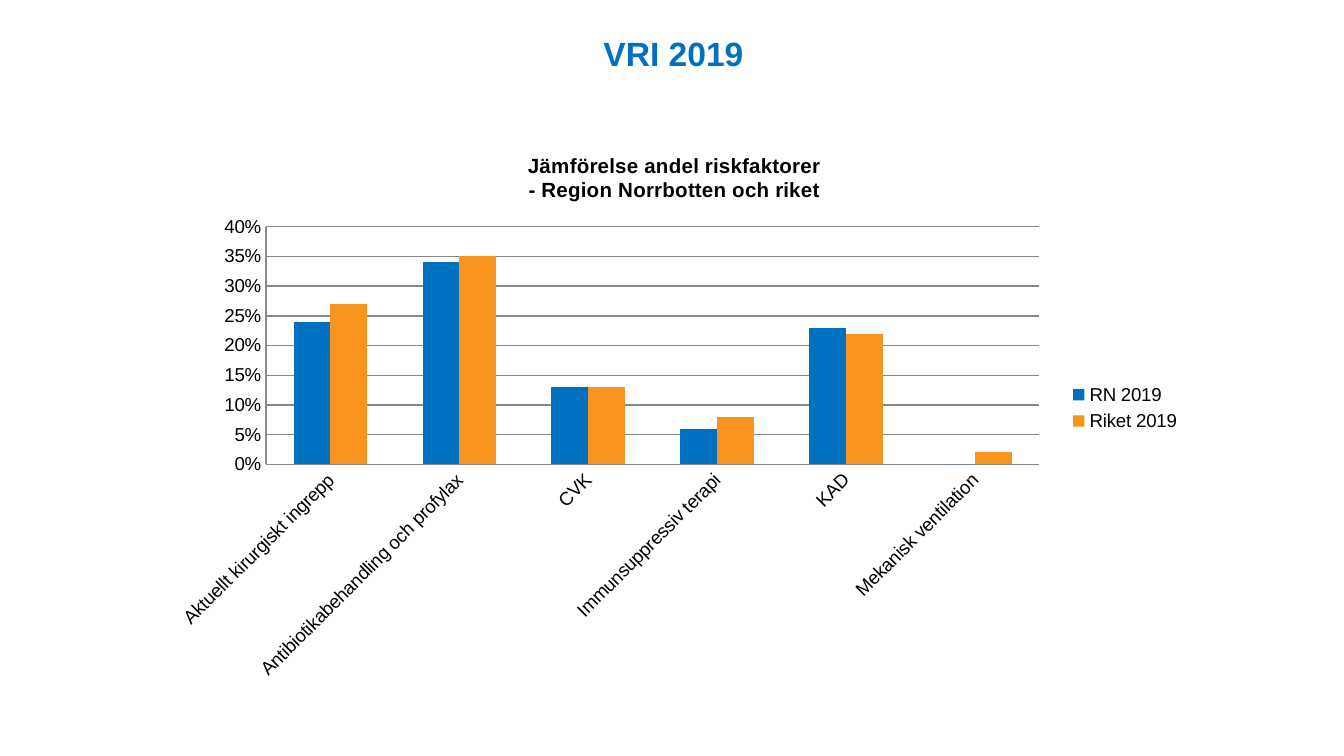
import pptx
import pptx.chart.data
import pptx.dml.color
import pptx.enum.chart
import pptx.enum.text
import pptx.oxml
import pptx.oxml.ns
import pptx.util

SCALE = 914400 / 134.4
BLUE, ORANGE, BLACK, GREY = "0070C0", "F8951F", "000000", "878787"
CATS = ["Aktuellt kirurgiskt ingrepp", "Antibiotikabehandling och profylax",
        "CVK", "Immunsuppressiv terapi", "KAD", "Mekanisk ventilation"]
ROWS = [("RN 2019", BLUE, [0.24, 0.34, 0.13, 0.06, 0.23, 0]),
        ("Riket 2019", ORANGE, [0.27, 0.35, 0.13, 0.08, 0.22, 0.02])]


def px(num):
    return pptx.util.Emu(round(num * SCALE))


def color(code):
    return pptx.dml.color.RGBColor.from_string(code)


def style(font, size, code=BLACK, bold=False):
    font.name = "Arial"
    font.size = pptx.util.Pt(size)
    font.bold = bold
    font.color.rgb = color(code)


def write(frame, text, size=10, code=BLACK, bold=False):
    for i, line in enumerate(text.split("\n")):
        para = frame.add_paragraph() if i else frame.paragraphs[0]
        para.alignment = pptx.enum.text.PP_ALIGN.CENTER
        run = para.add_run()
        run.text = line
        style(run.font, size, code, bold)


def place(node, left, top, wide=None, high=None):
    space = pptx.oxml.ns.nsdecls("c")
    parts = [("xMode", "edge"), ("yMode", "edge"), ("x", left), ("y", top)]
    if wide:
        parts = [("layoutTarget", "inner")] + parts + [("w", wide), ("h", high)]
    body = "".join(f'<c:{tag} val="{val}"/>' for tag, val in parts)
    for old in node.findall(pptx.oxml.ns.qn("c:layout")):
        node.remove(old)
    layout = pptx.oxml.parse_xml(
        f"<c:layout {space}><c:manualLayout>{body}</c:manualLayout></c:layout>")
    text = node.find(pptx.oxml.ns.qn("c:tx"))
    if text is None:
        node.insert(0, layout)
    else:
        text.addnext(layout)


def add_title(slide, left, top, wide, high):
    title = slide.shapes.title
    title.left, title.top = px(left), px(top)
    title.width, title.height = px(wide), px(high)
    frame = title.text_frame
    frame.word_wrap = True
    frame.auto_size = pptx.enum.text.MSO_AUTO_SIZE.NONE
    frame.vertical_anchor = pptx.enum.text.MSO_ANCHOR.BOTTOM
    frame.margin_left = frame.margin_right = px(10)
    frame.margin_top = frame.margin_bottom = px(5)
    write(frame, "VRI 2019", size=18, code=BLUE, bold=True)


def set_axes(chart):
    enum = pptx.enum.chart
    cat, val = chart.category_axis, chart.value_axis
    for axis in (cat, val):
        axis.major_tick_mark = axis.minor_tick_mark = enum.XL_TICK_MARK.NONE
        axis.format.line.color.rgb = color(GREY)
        axis.format.line.width = pptx.util.Pt(0.75)
        style(axis.tick_labels.font, 10)
    cat.has_major_gridlines = False
    turn = cat.tick_labels.font._element.getparent().getparent().getparent()
    turn.find(pptx.oxml.ns.qn("a:bodyPr")).set("rot", "-2700000")
    val.minimum_scale, val.maximum_scale, val.major_unit = 0, 0.4, 0.05
    val.tick_labels.number_format = "0%"
    val.tick_labels.number_format_is_linked = False
    grid = val.major_gridlines.format.line
    grid.color.rgb = color(GREY)
    grid.width = pptx.util.Pt(0.75)


def add_bars(slide, left, top, wide, high):
    enum = pptx.enum.chart
    data = pptx.chart.data.CategoryChartData(number_format="0%")
    data.categories = CATS
    for name, code, vals in ROWS:
        data.add_series(name, vals)
    chart = slide.shapes.add_chart(
        enum.XL_CHART_TYPE.COLUMN_CLUSTERED,
        px(left), px(top), px(wide), px(high), data).chart
    style(chart.font, 10)
    chart.has_title = True
    write(chart.chart_title.text_frame,
          "Jämförelse andel riskfaktorer\n- Region Norrbotten och riket",
          size=11, bold=True)
    chart.chart_title.include_in_layout = False
    place(chart.chart_title._element, 0.35, 0.04)
    chart.has_legend = True
    chart.legend.position = enum.XL_LEGEND_POSITION.RIGHT
    chart.legend.include_in_layout = False
    style(chart.legend.font, 10)
    plot = chart.plots[0]
    plot.gap_width, plot.overlap = 150, 0
    plot.vary_by_categories = False
    for bars, (name, code, vals) in zip(plot.series, ROWS):
        bars.format.fill.solid()
        bars.format.fill.fore_color.rgb = color(code)
    set_axes(chart)
    place(plot._element.getparent(), 0.1, 0.18, 0.75, 0.42)


def main():
    deck = pptx.Presentation()
    deck.slide_width, deck.slide_height = px(1344), px(756)
    slide = deck.slides.add_slide(deck.slide_layouts.get_by_name("Title Only"))
    add_title(slide, 234, 34, 879, 44)
    add_bars(slide, 163, 125, 1031, 566)
    deck.save("out.pptx")


if __name__ == "__main__":
    main()
